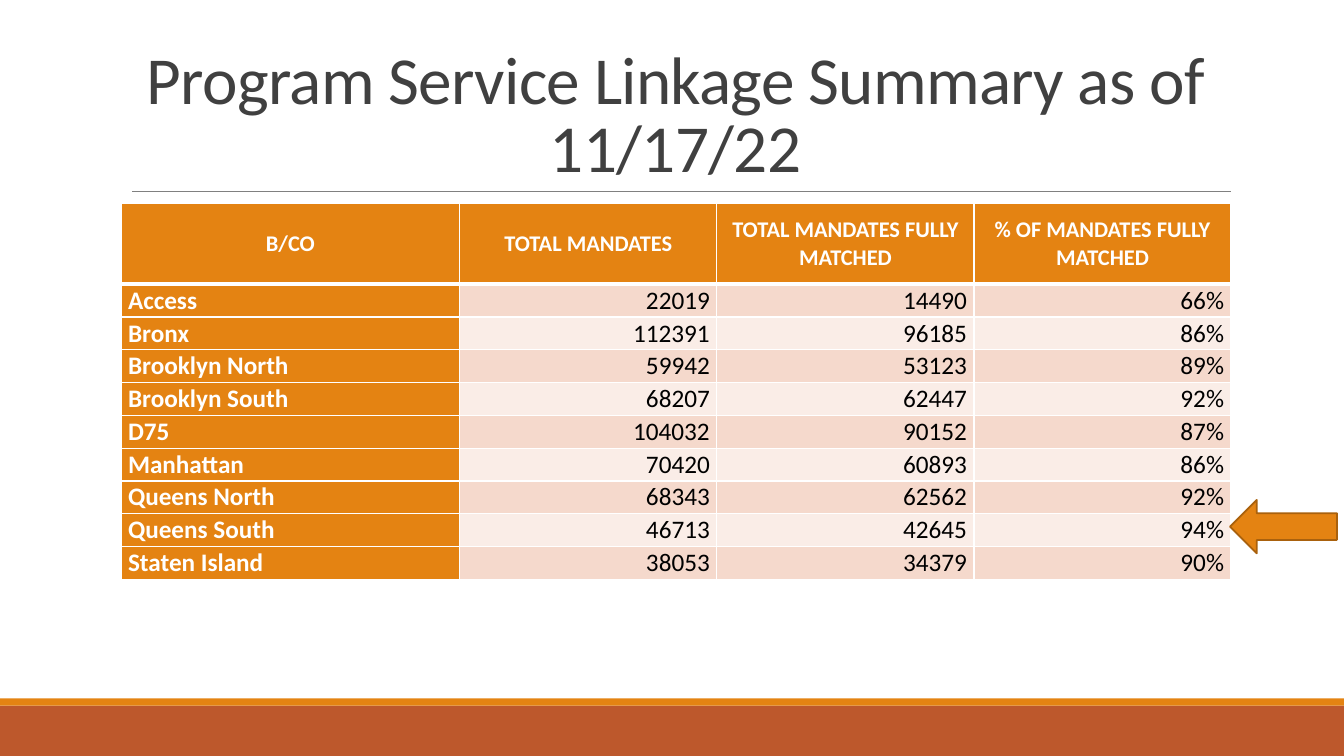
from pptx import Presentation
from pptx import util as u
from pptx.dml.color import RGBColor
from pptx.enum import shapes, text
from pptx.oxml import parse_xml
from pptx.oxml.ns import nsdecls
from lxml import etree

FONT = "Calibri"
WHITE = RGBColor(0xFF, 0xFF, 0xFF)
BLACK = RGBColor(0, 0, 0)
GRAY = RGBColor(0x40, 0x40, 0x40)
RULE = RGBColor(0x80, 0x80, 0x80)
ORANGE = RGBColor(0xE4, 0x83, 0x12)
RUST = RGBColor(0xBD, 0x58, 0x2C)
BROWN = RGBColor(0xA9, 0x61, 0x0D)
BANDS = RGBColor(0xF5, 0xD9, 0xCC), RGBColor(0xFA, 0xED, 0xE7)

HEADS = ["B/CO", "TOTAL MANDATES", "TOTAL MANDATES FULLY MATCHED",
         "% OF MANDATES FULLY MATCHED"]
ROWS = [
    ("Access", 22019, 14490, "66%"),
    ("Bronx", 112391, 96185, "86%"),
    ("Brooklyn North", 59942, 53123, "89%"),
    ("Brooklyn South", 68207, 62447, "92%"),
    ("D75", 104032, 90152, "87%"),
    ("Manhattan", 70420, 60893, "86%"),
    ("Queens North", 68343, 62562, "92%"),
    ("Queens South", 46713, 42645, "94%"),
    ("Staten Island", 38053, 34379, "90%"),
]
WIDTHS = [3.36, 2.55, 2.55, 2.55]
HEAD_H, ROW_H = 0.8, 0.32


def inches(*values):
    return [u.Inches(v) for v in values]


def style(para, align, **font):
    para.alignment = align
    for name, value in font.items():
        if name == "color":
            para.font.color.rgb = value
        else:
            setattr(para.font, name, value)


def add_block(slide, kind, box, fill, line=None):
    block = slide.shapes.add_shape(kind, *inches(*box))
    block.shadow.inherit = False
    block.fill.solid()
    block.fill.fore_color.rgb = fill
    if line is None:
        block.line.fill.background()
    else:
        block.line.color.rgb = line
        block.line.width = u.Pt(1.25)


def add_rule(slide, ends):
    rule = slide.shapes.add_connector(shapes.MSO_CONNECTOR.STRAIGHT, *inches(*ends))
    rule.line.color.rgb = RULE
    rule.line.width = u.Pt(0.5)
    etree.SubElement(rule._element.spPr, "{http://schemas.openxmlformats.org/"
                     "drawingml/2006/main}effectLst")


def set_title(slide, words):
    title = slide.shapes.title
    title.left, title.top, title.width, title.height = inches(1.2, 0.31, 11, 1.59)
    frame = title.text_frame
    frame.text = words
    frame.word_wrap = True
    frame.auto_size = text.MSO_AUTO_SIZE.NONE
    frame.vertical_anchor = text.MSO_ANCHOR.BOTTOM
    para = frame.paragraphs[0]
    para.line_spacing = 0.85
    style(para, text.PP_ALIGN.CENTER, name=FONT, size=u.Pt(48), color=GRAY)
    para.runs[0].font._element.set("spc", "-50")


def add_edges(cell, low):
    """Draw white cell borders; low is the bottom width in points."""
    props = cell._tc.get_or_add_tcPr()
    widths = {"lnL": 1, "lnR": 1, "lnT": 1, "lnB": low}
    for spot, (tag, width) in enumerate(widths.items()):
        props.insert(spot, parse_xml(
            f'<a:{tag} {nsdecls("a")} w="{u.Pt(width)}"><a:solidFill>'
            f'<a:srgbClr val="{WHITE}"/></a:solidFill></a:{tag}>'))


def fill_cell(cell, value, row, col):
    head, label = row == 0, col == 0
    cell.text = str(value)
    margins = {"left": 0.07, "top": 0.01, "right": 0.07, "bottom": 0.01}
    for side, size in margins.items():
        setattr(cell, f"margin_{side}", u.Inches(size))
    cell.vertical_anchor = text.MSO_ANCHOR.MIDDLE if head else text.MSO_ANCHOR.BOTTOM
    strong = head or label
    cell.fill.solid()
    cell.fill.fore_color.rgb = ORANGE if strong else BANDS[(row - 1) % 2]
    if head:
        align = text.PP_ALIGN.CENTER
    else:
        align = text.PP_ALIGN.LEFT if label else text.PP_ALIGN.RIGHT
    style(cell.text_frame.paragraphs[0], align, name=FONT, bold=strong,
          size=u.Pt(16 if head else 18), color=WHITE if strong else BLACK)
    add_edges(cell, 3 if head else 1)


def add_grid(slide):
    data = [HEADS, *ROWS]
    box = inches(1.2, 2.02, sum(WIDTHS), HEAD_H + ROW_H * len(ROWS))
    grid = slide.shapes.add_table(len(data), len(HEADS), *box).table
    for col, width in zip(grid.columns, WIDTHS):
        col.width = u.Inches(width)
    for r, values in enumerate(data):
        grid.rows[r].height = u.Inches(ROW_H if r else HEAD_H)
        for c, value in enumerate(values):
            fill_cell(grid.cell(r, c), value, r, c)


def main():
    deck = Presentation()
    deck.slide_width, deck.slide_height = inches(13.33, 7.5)
    slide = deck.slides.add_slide(deck.slide_layouts[5])
    kinds = shapes.MSO_SHAPE
    add_block(slide, kinds.RECTANGLE, (0, 7, 13.33, 0.5), RUST)
    add_block(slide, kinds.RECTANGLE, (0, 6.93, 13.33, 0.07), ORANGE)
    add_rule(slide, (1.31, 1.9, 12.21, 1.9))
    set_title(slide, "Program Service Linkage Summary as of 11/17/22")
    add_grid(slide)
    add_block(slide, kinds.LEFT_ARROW, (12.2, 4.96, 1.06, 0.53), ORANGE, BROWN)
    deck.save("out.pptx")


if __name__ == "__main__":
    main()
